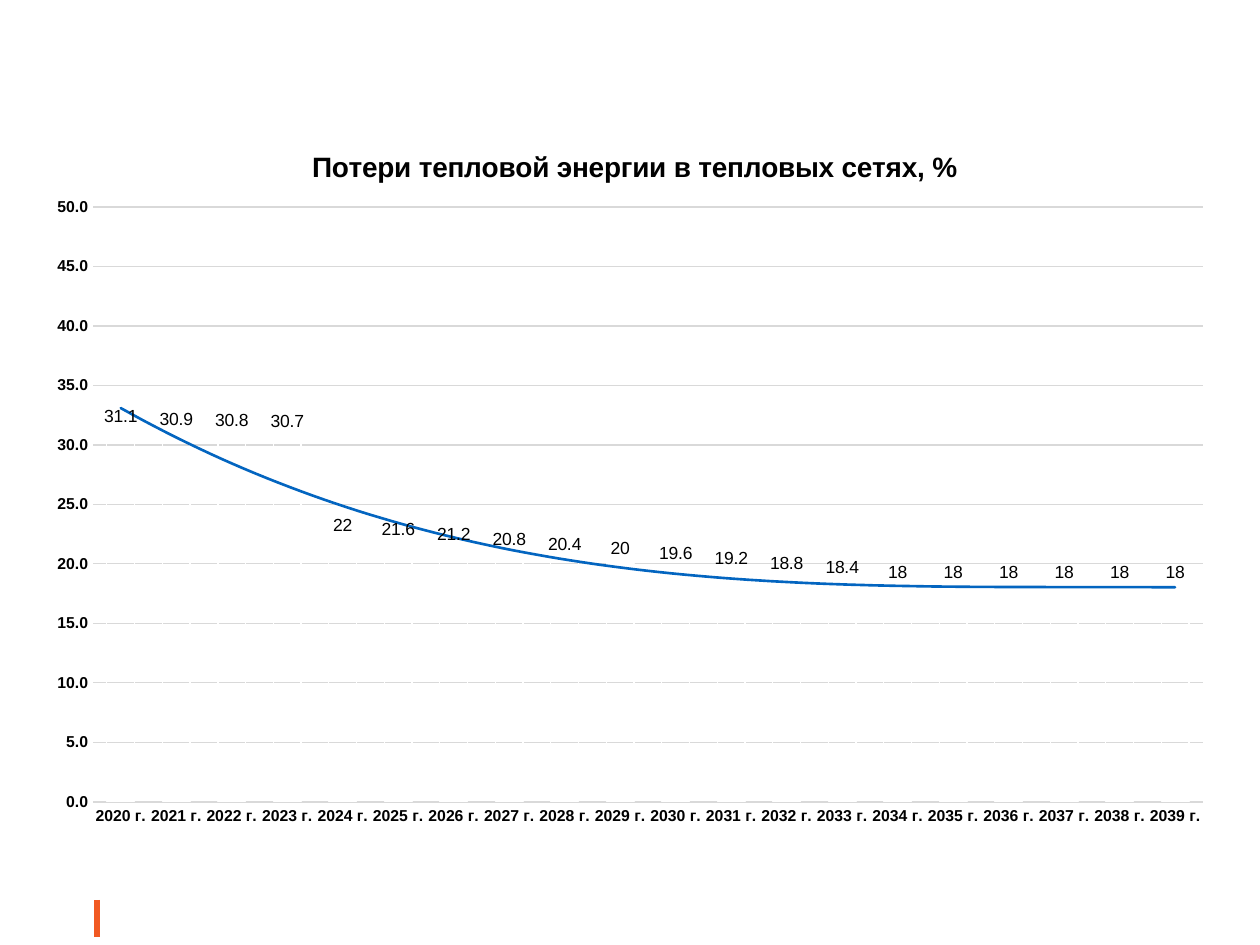
from pptx import Presentation
from pptx.chart.data import CategoryChartData
from pptx.dml.color import RGBColor
from pptx.enum.chart import XL_CHART_TYPE, XL_LABEL_POSITION, XL_TICK_MARK
from pptx.enum.shapes import MSO_CONNECTOR
from pptx.oxml import parse_xml
from pptx.oxml.ns import nsdecls, qn
from pptx.util import Emu, Pt

PX = 914400 / 126
BLACK = RGBColor(0x00, 0x00, 0x00)
WHITE = RGBColor(0xFF, 0xFF, 0xFF)
GREY = RGBColor(0xD9, 0xD9, 0xD9)
BLUE = RGBColor(0x03, 0x65, 0xC0)
ORANGE = RGBColor(0xF1, 0x59, 0x22)

TITLE = "Потери тепловой энергии в тепловых сетях, %"
YEARS = [f"{year} г." for year in range(2020, 2040)]
LOSSES = [31.1, 30.9, 30.8, 30.7, 22, 21.6, 21.2, 20.8, 20.4, 20,
          19.6, 19.2, 18.8, 18.4, 18, 18, 18, 18, 18, 18]


def px(*values):
    return [Emu(round(value * PX)) for value in values]


class Deck:
    def __init__(self, width, height, face):
        self.show = Presentation()
        self.show.slide_width, self.show.slide_height = px(width, height)
        self.slide = self.show.slides.add_slide(self.show.slide_layouts[6])
        self.face = face

    def style(self, font, size, bold=False):
        font.name, font.size, font.bold = self.face, Pt(size), bold
        font.color.rgb = BLACK

    def stroke(self, line, color, width):
        line.color.rgb, line.width = color, Pt(width)

    def line(self, x1, y1, x2, y2, color, width):
        line = self.slide.shapes.add_connector(
            MSO_CONNECTOR.STRAIGHT, *px(x1, y1, x2, y2))
        self.stroke(line.line, color, width)
        line._element.spPr.append(parse_xml(f"<a:effectLst {nsdecls('a')}/>"))

    def columns(self, x, y, wide, high, names, values):
        data = CategoryChartData()
        data.categories = names
        data.add_series("Series 1", values)
        chart = self.slide.shapes.add_chart(
            XL_CHART_TYPE.COLUMN_CLUSTERED, *px(x, y, wide, high), data).chart
        chart.has_legend = False
        self.style(chart.font, 10)
        plot = chart.plots[0]
        plot.gap_width, plot.overlap = 100, -24
        plot.vary_by_categories = False
        return chart

    def title(self, chart, text, size):
        chart.has_title = True
        frame = chart.chart_title.text_frame
        frame.text = text
        self.style(frame.paragraphs[0].font, size, True)

    def axes(self, chart, top, step):
        for axis in (chart.category_axis, chart.value_axis):
            axis.major_tick_mark = axis.minor_tick_mark = XL_TICK_MARK.NONE
            self.style(axis.tick_labels.font, 9, True)
        self.stroke(chart.category_axis.format.line, GREY, 1)
        axis = chart.value_axis
        axis.minimum_scale, axis.maximum_scale, axis.major_unit = 0, top, step
        axis.format.line.fill.background()
        self.stroke(axis.major_gridlines.format.line, GREY, 0.75)
        axis.tick_labels.number_format = "0.0"
        axis.tick_labels.number_format_is_linked = False

    def labels(self, series, size):
        labels = series.data_labels
        labels.show_value = True
        labels.position = XL_LABEL_POSITION.OUTSIDE_END
        self.style(labels.font, size)

    def trend(self, series, order, color, width):
        series._element.find(qn("c:cat")).addprevious(parse_xml(
            f"<c:trendline {nsdecls('c', 'a')}>"
            f'<c:spPr><a:ln w="{Pt(width)}" cap="rnd"><a:solidFill>'
            f'<a:srgbClr val="{color}"/></a:solidFill></a:ln></c:spPr>'
            f'<c:trendlineType val="poly"/><c:order val="{order}"/>'
            '<c:dispRSqr val="0"/><c:dispEq val="0"/></c:trendline>'))

    def place(self, host, **parts):
        """Fix a chart part at fractions of the chart's size."""
        old = host.find(qn("c:layout"))
        if old is not None:
            host.remove(old)
        inner = '<c:layoutTarget val="inner"/>' if "w" in parts else ""
        modes = "".join(f'<c:{key}Mode val="edge"/>' for key in "xy")
        sizes = "".join(f'<c:{key} val="{part:.4f}"/>'
                        for key, part in parts.items())
        layout = parse_xml(f"<c:layout {nsdecls('c')}><c:manualLayout>"
                           f"{inner}{modes}{sizes}</c:manualLayout></c:layout>")
        host.insert(0 if host.find(qn("c:tx")) is None else 1, layout)


def main():
    deck = Deck(1260, 945, "Arial")

    # Footer mark
    deck.line(97, 900, 97, 937, ORANGE, 3)

    # Chart of heat losses
    left, top, wide, high = 34, 115, 1193, 724
    chart = deck.columns(left, top, wide, high, YEARS, LOSSES)
    deck.title(chart, TITLE, 16)
    deck.axes(chart, 50, 5)

    # Hollow columns carry the labels and the trend
    series = chart.plots[0].series[0]
    series.format.fill.background()
    deck.stroke(series.format.line, WHITE, 0.75)
    deck.labels(series, 10)
    deck.trend(series, 3, BLUE, 1.5)

    # Title and plot positions
    deck.place(chart.chart_title._element,
               x=(307 - left) / wide, y=(144 - top) / high)
    deck.place(chart._chartSpace.chart.plotArea,
               x=(93 - left) / wide, y=(207 - top) / high,
               w=1110 / wide, h=595 / high)

    deck.show.save("out.pptx")


if __name__ == "__main__":
    main()
